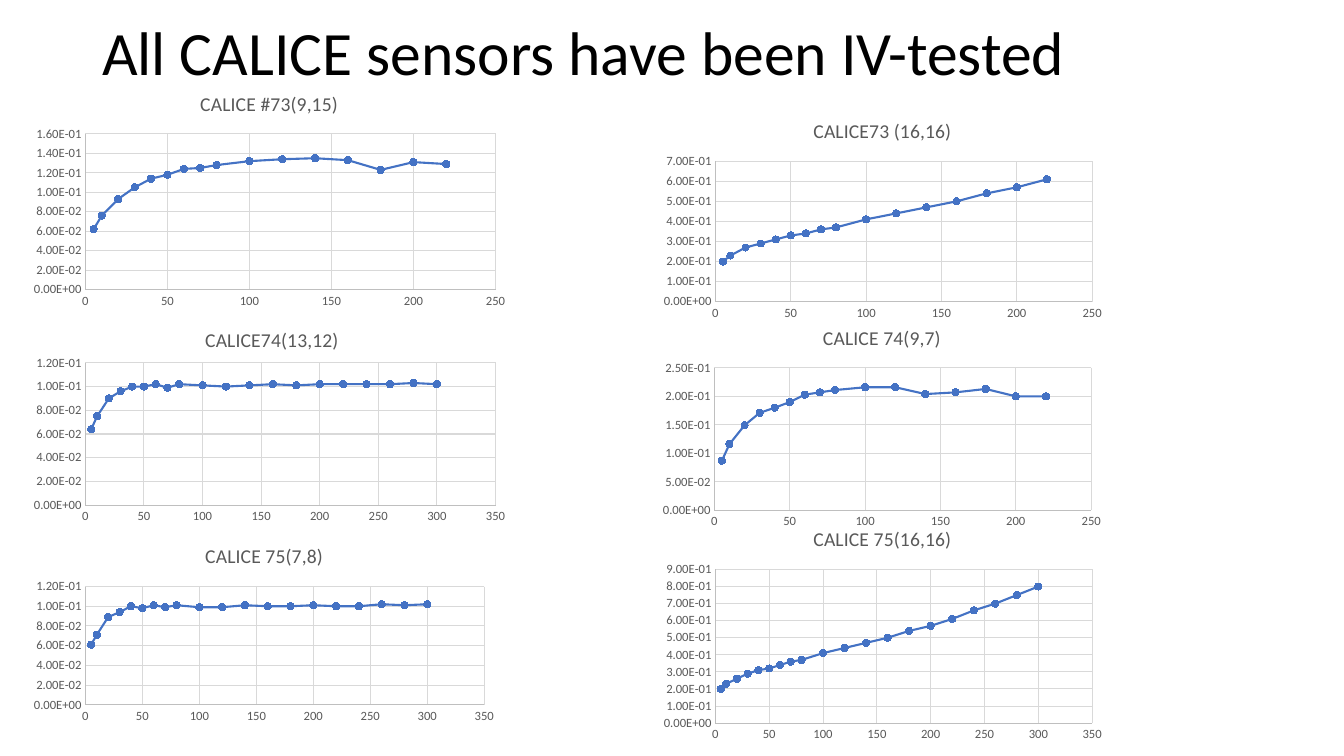
from collections import namedtuple

from lxml.etree import SubElement
from pptx import Presentation
from pptx.chart.data import XyChartData
from pptx.dml.color import RGBColor
from pptx.enum.chart import XL_CHART_TYPE as ChartType
from pptx.enum.chart import XL_MARKER_STYLE as Marker
from pptx.enum.chart import XL_TICK_MARK as Tick
from pptx.enum.text import MSO_ANCHOR as Anchor
from pptx.oxml.ns import qn
from pptx.util import Pt

BLACK = RGBColor(0x00, 0x00, 0x00)
GREY = RGBColor(0x59, 0x59, 0x59)
AXIS_GREY = RGBColor(0xBF, 0xBF, 0xBF)
GRID_GREY = RGBColor(0xD9, 0xD9, 0xD9)
BLUE = RGBColor(0x44, 0x72, 0xC4)
FACE = "Calibri"

VOLTAGES = [5, *range(10, 80, 10), *range(80, 301, 20)]

Box = namedtuple("Box", "left top width height")
Sensor = namedtuple("Sensor", "title box title_at voltage_max current_max current_step currents")

SENSORS = [
    Sensor("CALICE #73(9,15)", Box(18, 54.7, 350, 169.2), (122.5, 7), 250, 0.16, 0.02,
           [0.062, 0.076, 0.093, 0.105, 0.114, 0.118, 0.124, 0.125, 0.128, 0.132,
            0.134, 0.135, 0.133, 0.123, 0.131, 0.129]),
    Sensor("CALICE73 (16,16)", Box(468, 74.2, 326.2, 158.4), (110.5, 7), 250, 0.7, 0.1,
           [0.2, 0.23, 0.27, 0.29, 0.31, 0.33, 0.34, 0.36, 0.37, 0.41,
            0.44, 0.47, 0.5, 0.54, 0.57, 0.61]),
    Sensor("CALICE74(13,12)", Box(18, 218.2, 350, 159.8), (126, 12), 350, 0.12, 0.02,
           [0.064, 0.075, 0.09, 0.096, 0.1, 0.1, 0.102, 0.099, 0.102, 0.101,
            0.1, 0.101, 0.102, 0.101, 0.102, 0.102, 0.102, 0.102, 0.103, 0.102]),
    Sensor("CALICE 74(9,7)", Box(467.3, 221.8, 326.2, 159.8), (118, 7), 250, 0.25, 0.05,
           [0.087, 0.116, 0.149, 0.171, 0.18, 0.19, 0.203, 0.207, 0.211, 0.216,
            0.216, 0.204, 0.207, 0.213, 0.2, 0.2]),
    Sensor("CALICE 75(7,8)", Box(18, 378, 342, 142.6), (126, 7), 350, 0.12, 0.02,
           [0.061, 0.071, 0.089, 0.094, 0.1, 0.098, 0.101, 0.099, 0.101, 0.099,
            0.099, 0.101, 0.1, 0.1, 0.101, 0.1, 0.1, 0.102, 0.101, 0.102]),
    Sensor("CALICE 75(16,16)", Box(468, 365.8, 326.2, 167.8), (110.5, 7), 350, 0.9, 0.1,
           [0.2, 0.23, 0.26, 0.29, 0.31, 0.32, 0.34, 0.36, 0.37, 0.41,
            0.44, 0.47, 0.5, 0.54, 0.57, 0.61, 0.66, 0.7, 0.75, 0.8]),
]


def apply_format(target, **values):
    for name, value in values.items():
        setattr(target, name, value)


def style_font(font, size, color):
    apply_format(font, name=FACE, size=Pt(size), bold=False)
    font.color.rgb = color


def style_line(line, width, color):
    line.width = Pt(width)
    line.color.rgb = color


def set_layout(parent, index, **settings):
    """Give a chart part a manual layout, in fractions of the chart."""
    for old in parent.findall(qn("c:layout")):
        parent.remove(old)
    layout = parent.makeelement(qn("c:layout"))
    parent.insert(index, layout)
    manual = SubElement(layout, qn("c:manualLayout"))
    for name, value in settings.items():
        SubElement(manual, qn(f"c:{name}")).set("val", str(value))


def style_axis(axis, maximum, step, number_format):
    apply_format(axis, minimum_scale=0, maximum_scale=maximum, major_unit=step,
                 has_major_gridlines=True, major_tick_mark=Tick.NONE,
                 minor_tick_mark=Tick.NONE)
    apply_format(axis.tick_labels, number_format=number_format,
                 number_format_is_linked=False)
    style_font(axis.tick_labels.font, 9, GREY)
    style_line(axis.format.line, 0.75, AXIS_GREY)
    style_line(axis.major_gridlines.format.line, 0.75, GRID_GREY)


def style_curve(curve):
    curve.smooth = False
    style_line(curve.format.line, 1.5, BLUE)
    apply_format(curve.marker, style=Marker.CIRCLE, size=5)
    curve.marker.format.fill.solid()
    curve.marker.format.fill.fore_color.rgb = BLUE
    style_line(curve.marker.format.line, 0.75, BLUE)


def add_iv_chart(slide, sensor):
    box = sensor.box
    data = XyChartData()
    measured = data.add_series("Series 1")
    for voltage, current in zip(VOLTAGES, sensor.currents):
        measured.add_data_point(voltage, current)
    chart = slide.shapes.add_chart(ChartType.XY_SCATTER_LINES,
                                   *map(Pt, box), data).chart
    apply_format(chart, has_legend=False, has_title=True)
    style_font(chart.font, 10, BLACK)
    chart.plots[0].vary_by_categories = False

    heading = chart.chart_title.text_frame
    heading.text = sensor.title
    style_font(heading.paragraphs[0].runs[0].font, 14, GREY)
    title_left, title_top = sensor.title_at
    set_layout(chart.element.find(f".//{qn('c:title')}"), 1, xMode="edge", yMode="edge",
               x=title_left / box.width, y=title_top / box.height)

    left, top, right, bottom = 43, 41, 14, 17
    set_layout(chart.element.find(f".//{qn('c:plotArea')}"), 0, layoutTarget="inner",
               xMode="edge", yMode="edge", x=left / box.width, y=top / box.height,
               w=1 - (left + right) / box.width, h=1 - (top + bottom) / box.height)

    style_axis(chart.category_axis, sensor.voltage_max, 50, "General")
    style_axis(chart.value_axis, sensor.current_max, sensor.current_step, "0.00E+00")
    style_curve(chart.plots[0].series[0])


def add_heading(slide, box):
    frame = slide.shapes.add_textbox(*map(Pt, box)).text_frame
    apply_format(frame, word_wrap=True, vertical_anchor=Anchor.MIDDLE)
    paragraph = frame.paragraphs[0]
    paragraph.line_spacing = 0.9
    run = paragraph.add_run()
    run.text = "All CALICE sensors have been IV-tested"
    style_font(run.font, 44, BLACK)


def main():
    deck = Presentation()
    apply_format(deck, slide_width=Pt(960), slide_height=Pt(540))
    slide = deck.slides.add_slide(deck.slide_layouts[6])
    add_heading(slide, Box(66, 2, 828, 75.6))
    for sensor in SENSORS:
        add_iv_chart(slide, sensor)
    deck.save("out.pptx")


if __name__ == "__main__":
    main()
